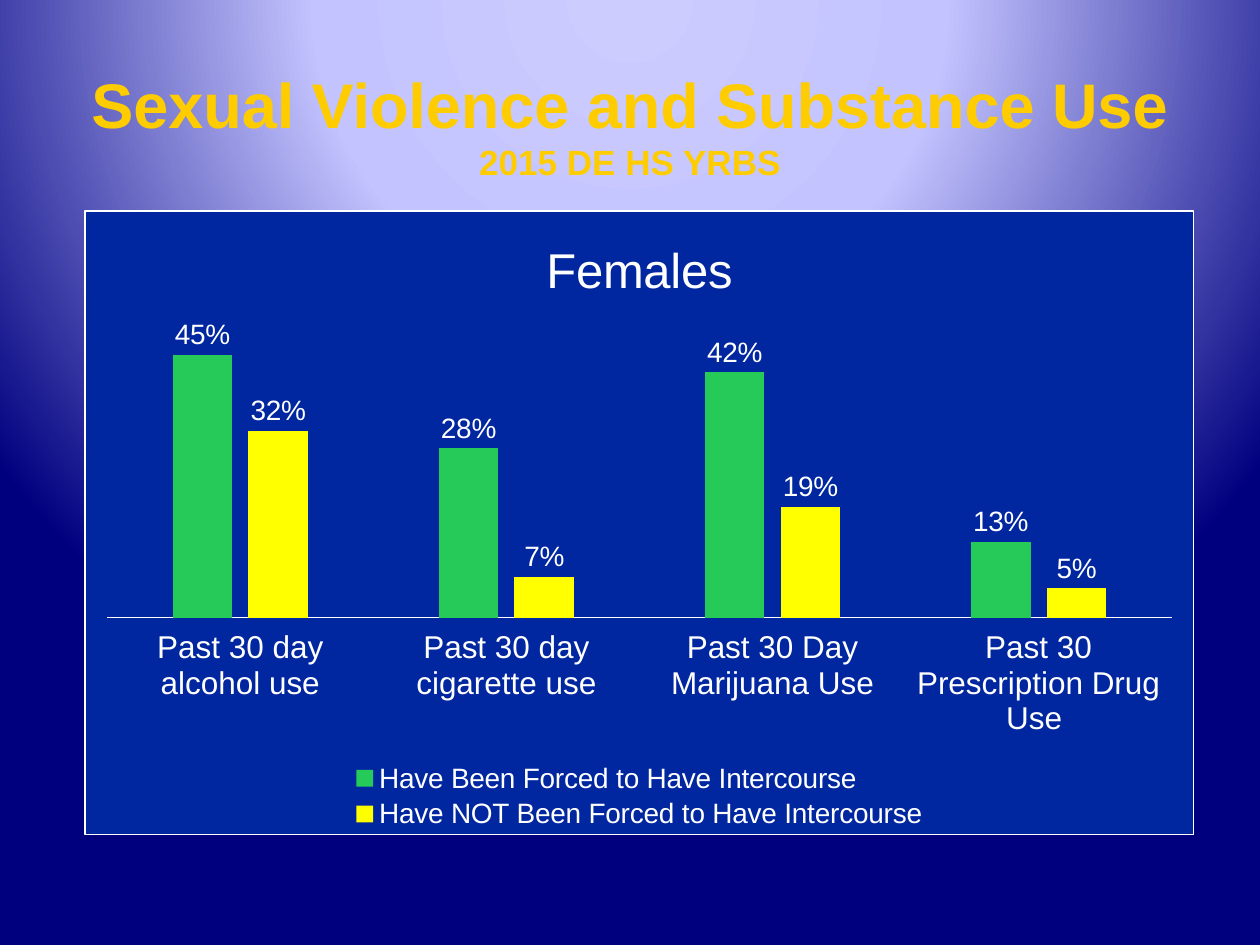
from dataclasses import dataclass
from lxml.etree import fromstring
from pptx import Presentation
from pptx.chart.data import CategoryChartData as ChartData
from pptx.dml.color import RGBColor as Rgb
from pptx.enum.chart import XL_CHART_TYPE as Kind
from pptx.enum.chart import XL_LABEL_POSITION as Spot
from pptx.enum.chart import XL_LEGEND_POSITION as Side
from pptx.enum.chart import XL_TICK_LABEL_POSITION as Tag
from pptx.enum.chart import XL_TICK_MARK as Tick
from pptx.enum.text import MSO_ANCHOR as Anchor
from pptx.enum.text import PP_ALIGN as Align
from pptx.oxml.ns import nsdecls
from pptx.oxml import parse_xml
from pptx.util import Inches, Pt


@dataclass(frozen=True)
class Theme:
    face: str = "Arial"
    gold: str = "FFCC00"
    white: str = "FFFFFF"
    navy: str = "00279F"
    bars: tuple = ("26CA59", "FFFF00")
    glow: tuple = ((0, "CCCCFF"), (40, "C3C3FF"), (100, "00007F"))
    head: int = 36
    sub: int = 20
    name: int = 28
    axis: int = 18
    label: int = 16
    base: int = 10
    rule: float = 0.75


THEME = Theme()
CATS = ("Past 30 day alcohol use", "Past 30 day cigarette use",
        "Past 30 Day Marijuana Use", "Past 30 Prescription Drug Use ")
ROWS = (("Have Been Forced to Have Intercourse", (0.45, 0.29, 0.42, 0.13)),
        ("Have NOT Been Forced to Have Intercourse", (0.32, 0.07, 0.19, 0.05)))


def style(font, size, color=THEME.white, bold=False):
    font.name = THEME.face
    font.size = Pt(size)
    font.bold = bold
    font.color.rgb = Rgb.from_string(color)


def paint(slide):
    stops = "".join(
        f'<a:gs pos="{pos * 1000}"><a:srgbClr val="{color}"/></a:gs>'
        for pos, color in THEME.glow)
    slide.background.fill.solid()
    props = slide.element.cSld.bg.bgPr
    props.replace(props[0], parse_xml(
        f'<a:gradFill {nsdecls("a")} rotWithShape="1"><a:gsLst>{stops}</a:gsLst>'
        '<a:path path="circle"><a:fillToRect l="50000" t="-80000" '
        'r="50000" b="180000"/></a:path></a:gradFill>'))


def add_title(slide, head, sub):
    title = slide.shapes.title
    title.left, title.top = Inches(0), Inches(0.38)
    title.width, title.height = Inches(10), Inches(1.21)
    frame = title.text_frame
    frame.word_wrap = True
    frame.vertical_anchor = Anchor.MIDDLE
    para = frame.paragraphs[0]
    para.alignment = Align.CENTER
    style(para.font, THEME.head, THEME.gold, True)
    para.add_run().text = head
    para.add_line_break()
    run = para.add_run()
    run.text = sub
    run.font.size = Pt(THEME.sub)


def fill_area(chart):
    line = int(Pt(THEME.rule))
    area = fromstring(
        f'<c:spPr {nsdecls("c", "a")}>'
        f'<a:solidFill><a:srgbClr val="{THEME.navy}"/></a:solidFill>'
        f'<a:ln w="{line}"><a:solidFill><a:srgbClr val="{THEME.white}"/>'
        '</a:solidFill></a:ln></c:spPr>')
    chart.element.chart.addnext(area)


def set_axes(chart):
    cat = chart.category_axis
    cat.major_tick_mark = cat.minor_tick_mark = Tick.NONE
    cat.tick_label_position = Tag.LOW
    cat.format.line.width = Pt(THEME.rule)
    cat.format.line.color.rgb = Rgb.from_string(THEME.white)
    style(cat.tick_labels.font, THEME.axis)
    val = chart.value_axis
    val.visible = False
    val.has_major_gridlines = False
    val.minimum_scale = 0
    val.tick_labels.number_format = "0%"
    val.tick_labels.number_format_is_linked = False


def set_bars(plot):
    plot.gap_width = 219
    plot.overlap = -27
    plot.vary_by_categories = False
    for row, color in zip(plot.series, THEME.bars):
        row.invert_if_negative = False
        row.format.fill.solid()
        row.format.fill.fore_color.rgb = Rgb.from_string(color)
        tags = row.data_labels
        tags.show_value = True
        tags.position = Spot.OUTSIDE_END
        tags.number_format = "0%"
        tags.number_format_is_linked = False
        style(tags.font, THEME.label)


def set_note(point, text):
    note = point.data_label
    run = note.text_frame.paragraphs[0].add_run()
    run.text = text
    style(run.font, THEME.label)
    note.position = Spot.OUTSIDE_END


def add_bars(slide):
    data = ChartData(number_format="0%")
    data.categories = CATS
    for name, vals in ROWS:
        data.add_series(name, vals)
    chart = slide.shapes.add_chart(
        Kind.COLUMN_CLUSTERED, Inches(0.67), Inches(1.67),
        Inches(8.81), Inches(4.96), data).chart
    style(chart.font, THEME.base)
    fill_area(chart)
    chart.has_title = True
    para = chart.chart_title.text_frame.paragraphs[0]
    para.add_run().text = "Females"
    style(para.font, THEME.name)
    chart.chart_title.include_in_layout = False
    chart.has_legend = True
    chart.legend.position = Side.BOTTOM
    chart.legend.include_in_layout = False
    style(chart.legend.font, THEME.label)
    set_axes(chart)
    set_bars(chart.plots[0])
    set_note(chart.plots[0].series[0].points[1], "28%")


def main():
    deck = Presentation()
    deck.slide_width, deck.slide_height = Inches(10), Inches(7.5)
    slide = deck.slides.add_slide(deck.slide_layouts[5])
    paint(slide)
    add_title(slide, "Sexual Violence and Substance Use", "2015 DE HS YRBS")
    add_bars(slide)
    deck.save("out.pptx")


if __name__ == "__main__":
    main()
